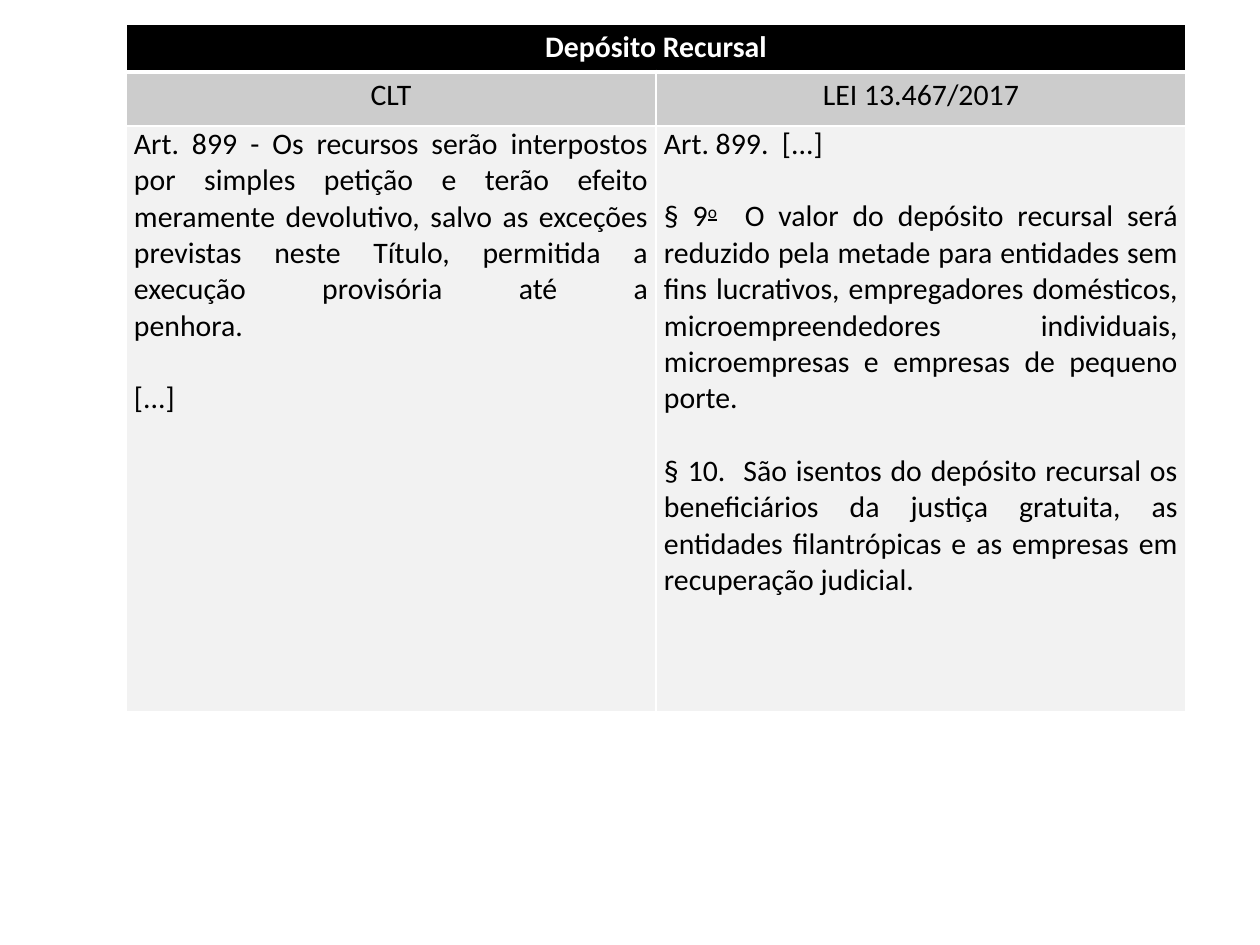
import dataclasses
import typing

import lxml.etree
import pptx
import pptx.dml.color
import pptx.enum.text
import pptx.oxml.ns
import pptx.table
import pptx.text.text
import pptx.util

PIXELS_PER_INCH = 126
FONT_NAME = "Calibri"
FONT_SIZE = pptx.util.Pt(17)
BLANK_LINE = pptx.util.Pt(20.75)
BLACK = pptx.dml.color.RGBColor(0x00, 0x00, 0x00)
WHITE = pptx.dml.color.RGBColor(0xFF, 0xFF, 0xFF)
GRAY = pptx.dml.color.RGBColor(0xCC, 0xCC, 0xCC)
LIGHT_GRAY = pptx.dml.color.RGBColor(0xF2, 0xF2, 0xF2)
CENTER = pptx.enum.text.PP_ALIGN.CENTER
JUSTIFY = pptx.enum.text.PP_ALIGN.JUSTIFY

COLUMN_WIDTHS = (530, 530)
ROW_HEIGHTS = (48, 54, 586)


@dataclasses.dataclass(frozen=True)
class Passage:
    text: str
    ordinal: str = ""
    ending: str = ""


@dataclasses.dataclass(frozen=True)
class RowStyle:
    fill: pptx.dml.color.RGBColor
    color: pptx.dml.color.RGBColor
    alignment: pptx.enum.text.PP_ALIGN
    line_spacing: float
    bold: bool = False
    bottom_points: int = 1


@dataclasses.dataclass(frozen=True)
class Row:
    style: RowStyle
    cells: typing.Tuple[typing.Tuple[Passage, ...], ...]


ROWS = (
    Row(
        RowStyle(BLACK, WHITE, CENTER, 1.15, bold=True, bottom_points=3),
        ((Passage("Depósito Recursal"),),),
    ),
    Row(
        RowStyle(GRAY, BLACK, CENTER, 1.15),
        ((Passage("CLT"),), (Passage("LEI 13.467/2017"),)),
    ),
    Row(
        RowStyle(LIGHT_GRAY, BLACK, JUSTIFY, 1.0),
        (
            (
                Passage(
                    "Art. 899 - Os recursos serão interpostos por simples petição e "
                    "terão efeito meramente devolutivo, salvo as exceções previstas "
                    "neste Título, permitida a execução provisória até a\vpenhora."
                ),
                Passage("[...]"),
            ),
            (
                Passage("Art. 899.  [...]"),
                Passage(
                    "§ 9",
                    "o",
                    "  O valor do depósito recursal será reduzido pela metade para "
                    "entidades sem fins lucrativos, empregadores domésticos, "
                    "microempreendedores individuais, microempresas e empresas de "
                    "pequeno porte.",
                ),
                Passage(
                    "§ 10.  São isentos do depósito recursal os beneficiários da "
                    "justiça gratuita, as entidades filantrópicas e as empresas em "
                    "recuperação judicial."
                ),
            ),
        ),
    ),
)


def px(length: int) -> pptx.util.Emu:
    return pptx.util.Emu(round(length * 914400 / PIXELS_PER_INCH))


def set_borders(cell: pptx.table._Cell, bottom_points: int) -> None:
    properties = cell._tc.get_or_add_tcPr()
    for side, points in (("L", 1), ("R", 1), ("T", 1), ("B", bottom_points)):
        line = lxml.etree.SubElement(
            properties, pptx.oxml.ns.qn(f"a:ln{side}"), w=str(pptx.util.Pt(points))
        )
        fill = lxml.etree.SubElement(line, pptx.oxml.ns.qn("a:solidFill"))
        lxml.etree.SubElement(fill, pptx.oxml.ns.qn("a:srgbClr"), val=str(WHITE))


def write_passage(
    paragraph: pptx.text.text._Paragraph, passage: Passage, style: RowStyle
) -> None:
    paragraph.text = passage.text
    paragraph.alignment = style.alignment
    paragraph.line_spacing = style.line_spacing
    if passage.ordinal:
        ordinal = paragraph.add_run()
        ordinal.text = passage.ordinal
        ordinal.font.underline = True
        ordinal._r.get_or_add_rPr().set("baseline", "30000")
        paragraph.add_run().text = passage.ending
    for run in paragraph.runs:
        run.font.name = FONT_NAME
        run.font.size = FONT_SIZE
        run.font.bold = style.bold
        run.font.color.rgb = style.color
    for line_break in paragraph._p.findall(pptx.oxml.ns.qn("a:br")):
        lxml.etree.SubElement(
            line_break,
            pptx.oxml.ns.qn("a:rPr"),
            sz=str(FONT_SIZE.centipoints),
        )


def fill_cell(
    cell: pptx.table._Cell, passages: typing.Sequence[Passage], style: RowStyle
) -> None:
    cell.margin_left = cell.margin_right = px(8)
    cell.margin_top = cell.margin_bottom = 0
    set_borders(cell, style.bottom_points)
    cell.fill.solid()
    cell.fill.fore_color.rgb = style.fill
    text_frame = cell.text_frame
    for index, passage in enumerate(passages):
        paragraph = text_frame.add_paragraph() if index else text_frame.paragraphs[0]
        write_passage(paragraph, passage, style)
        if index:
            paragraph.space_before = BLANK_LINE


def main() -> None:
    presentation = pptx.Presentation()
    presentation.slide_width = px(1260)
    presentation.slide_height = px(945)
    slide = presentation.slides.add_slide(presentation.slide_layouts[6])
    table = slide.shapes.add_table(
        len(ROW_HEIGHTS),
        len(COLUMN_WIDTHS),
        px(126),
        px(24),
        px(sum(COLUMN_WIDTHS)),
        px(sum(ROW_HEIGHTS)),
    ).table
    for column, width in zip(table.columns, COLUMN_WIDTHS):
        column.width = px(width)
    for table_row, height in zip(table.rows, ROW_HEIGHTS):
        table_row.height = px(height)
    table.cell(0, 0).merge(table.cell(0, 1))
    for row_index, row in enumerate(ROWS):
        for column_index, passages in enumerate(row.cells):
            fill_cell(table.cell(row_index, column_index), passages, row.style)
    presentation.save("out.pptx")


if __name__ == "__main__":
    main()
